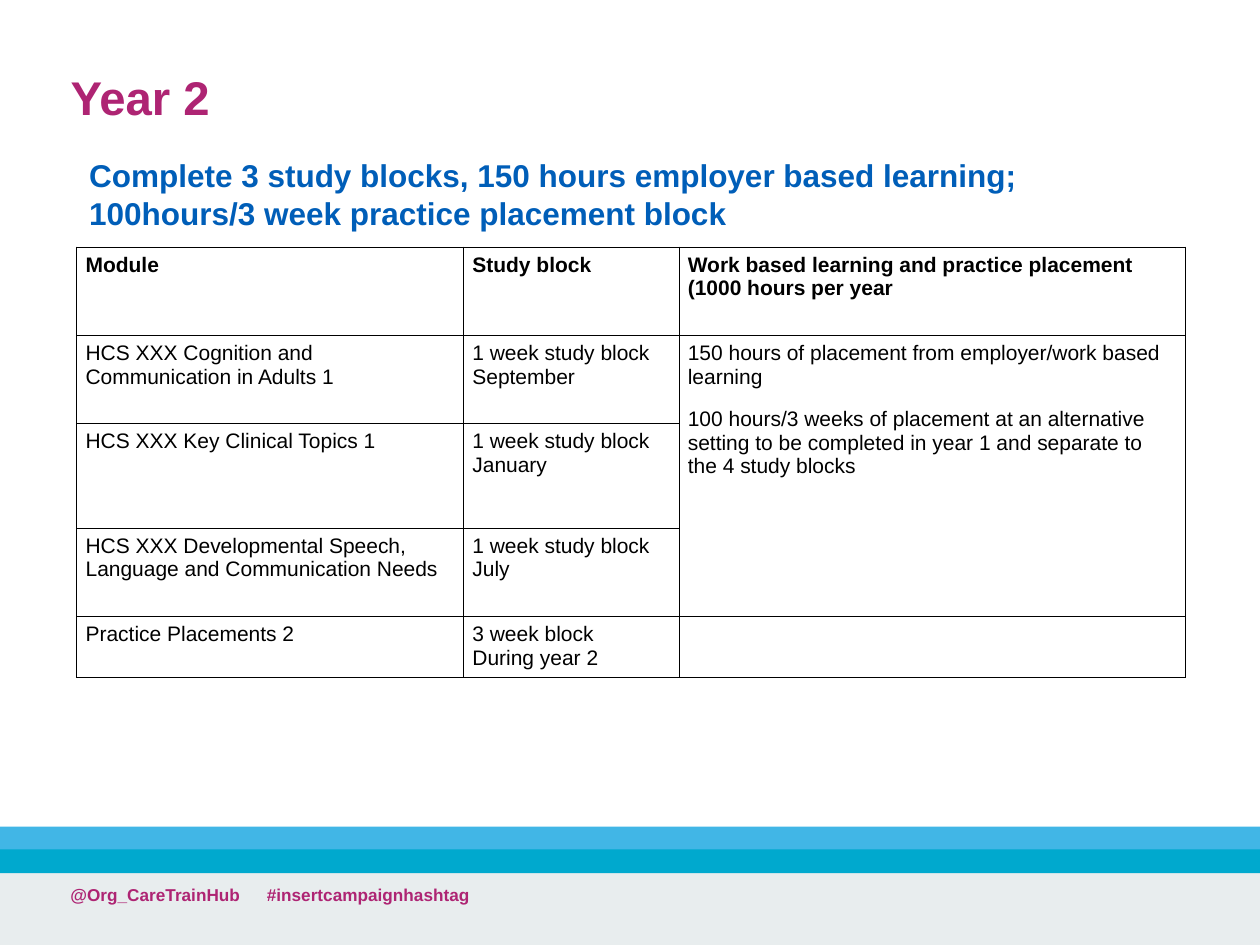
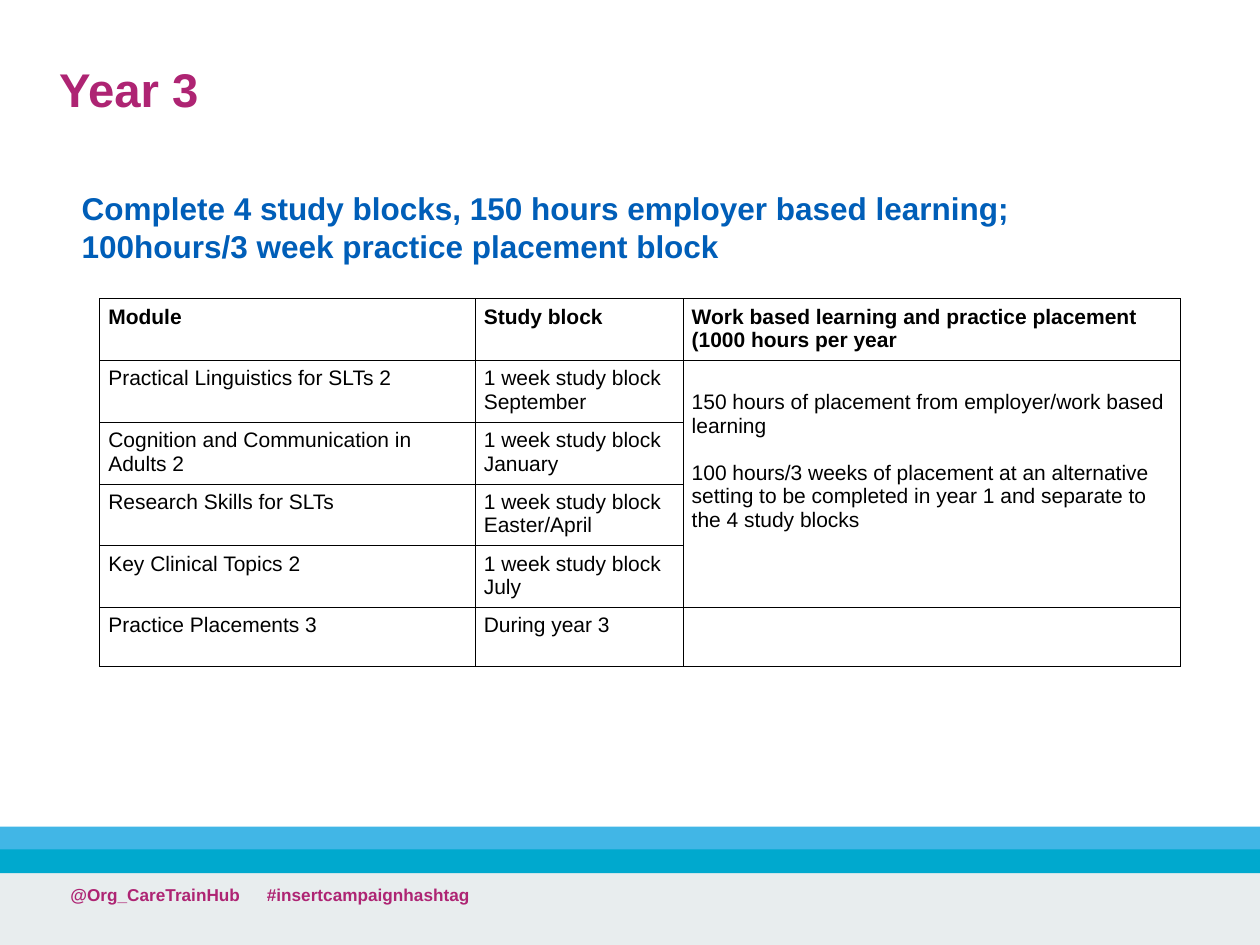
from lxml.etree import SubElement
from pptx import Presentation
from pptx.dml.color import RGBColor
from pptx.enum.shapes import MSO_SHAPE
from pptx.enum.text import MSO_ANCHOR, PP_ALIGN
from pptx.oxml.ns import qn
from pptx.util import Inches, Pt

FONT = "Arial"
PINK, BLUE, BLACK = "AE2473", "005EB8", "000000"
BANDS = [(6.93, 0.57, "E8EDEE"), (6.56, 0.19, "41B6E6"), (6.74, 0.19, "00A9CE")]
HANDLE = "@Org_CareTrainHub\t#insertcampaignhashtag"
WORK_HEAD = "Work based learning and practice placement (1000 hours per year"
WORK = (
    "150 hours of placement from employer/work based learning\n"
    "100 hours/3 weeks of placement at an alternative setting to be "
    "completed in year 1 and separate to the 4 study blocks"
)
WEEK = "1 week study block\n"
GOAL = (
    "Complete {} study blocks, 150 hours employer based learning; "
    "100hours/3 week practice placement block"
)

YEARS = [
    dict(
        title="Year 2", title_box=(0.46, 0.46, 8.62, 0.67),
        goal=GOAL.format(3), goal_box=(0.61, 1.19, 8.8, 0.71),
        spot=(0.61, 1.96), cols=(3.07, 1.71, 4.02),
        heights=(0.7, 0.7, 0.83, 0.7, 0.47), drop=0, gap=11,
        rows=[
            ("Module", "Study block", WORK_HEAD),
            ("HCS XXX Cognition and Communication in Adults 1", WEEK + "September", WORK),
            ("HCS XXX Key Clinical Topics 1", WEEK + "January", ""),
            ("HCS XXX Developmental Speech, Language and Communication Needs",
             WEEK + "July", ""),
            ("Practice Placements 2", "3 week block\nDuring year 2", ""),
        ],
    ),
    dict(
        title="Year 3", title_box=(0.37, 0.35, 8.62, 0.76),
        goal=GOAL.format(4), goal_box=(0.55, 1.45, 8.44, 0.71),
        spot=(0.79, 2.37), cols=(2.98, 1.65, 3.95),
        heights=(0.47,) * 6, drop=0.19, gap=13.5,
        rows=[
            ("Module", "Study block", WORK_HEAD),
            ("Practical Linguistics for SLTs 2", WEEK + "September", WORK),
            ("Cognition and Communication in Adults 2", WEEK + "January", ""),
            ("Research Skills for SLTs", WEEK + "Easter/April", ""),
            ("Key Clinical Topics 2", WEEK + "July", ""),
            ("Practice Placements 3", "During year 3", ""),
        ],
    ),
]


def color(code):
    return RGBColor.from_string(code)


def write(frame, text, size, code, bold=True):
    frame.text = text
    frame.word_wrap = True
    for para in frame.paragraphs:
        para.alignment = PP_ALIGN.LEFT
        for run in para.runs:
            font = run.font
            font.name, font.size, font.bold = FONT, Pt(size), bold
            font.color.rgb = color(code)


def add_text(slide, box, text, size, code):
    frame = slide.shapes.add_textbox(*map(Inches, box)).text_frame
    write(frame, text, size, code)
    return frame


def add_title(slide, box, text):
    title = slide.shapes.title
    title.left, title.top, title.width, title.height = map(Inches, box)
    write(title.text_frame, text, 27, PINK)
    title.text_frame.vertical_anchor = MSO_ANCHOR.MIDDLE
    title.text_frame.paragraphs[0].line_spacing = 0.9


def add_footer(slide):
    for top, height, code in BANDS:
        band = slide.shapes.add_shape(
            MSO_SHAPE.RECTANGLE, 0, Inches(top), Inches(10), Inches(height))
        band.shadow.inherit = False
        band.fill.solid()
        band.fill.fore_color.rgb = color(code)
        band.line.fill.background()
    frame = add_text(slide, (0.46, 6.97, 5.84, 0.53), HANDLE, 9.8, PINK)
    props = frame.paragraphs[0]._p.get_or_add_pPr()
    stops = SubElement(props, qn("a:tabLst"))
    SubElement(stops, qn("a:tab"), pos=str(Inches(1.56)), algn="l")


def outline(cell):
    """Give a cell thin black borders and no fill."""
    props = cell._tc.get_or_add_tcPr()
    for side in ("lnL", "lnR", "lnT", "lnB"):
        line = SubElement(props, qn("a:" + side), w=str(Pt(0.5)))
        fill = SubElement(line, qn("a:solidFill"))
        SubElement(fill, qn("a:srgbClr"), val=BLACK)
    cell.fill.background()


def add_plan(slide, spot, cols, heights, rows, drop, gap):
    """Module table; the work cell spans all rows between the head and last."""
    size = sum(cols), sum(heights)
    table = slide.shapes.add_table(
        len(rows), len(cols), *map(Inches, spot + size)).table
    table.first_row = table.horz_banding = False
    for col, width in zip(table.columns, cols):
        col.width = Inches(width)
    for row, height in zip(table.rows, heights):
        row.height = Inches(height)
    for r, texts in enumerate(rows):
        for c, text in enumerate(texts):
            cell = table.cell(r, c)
            cell.margin_left = cell.margin_right = Inches(0.07)
            cell.margin_top, cell.margin_bottom = Inches(0.05), Inches(0.04)
            outline(cell)
            if text:
                write(cell.text_frame, text, 12, BLACK, bold=r == 0)
    work = table.cell(1, 2)
    work.merge(table.cell(len(rows) - 2, 2))
    work.margin_top = Inches(0.05 + drop)
    work.text_frame.paragraphs[1].space_before = Pt(gap)


def add_year(deck, year):
    slide = deck.slides.add_slide(deck.slide_layouts.get_by_name("Title Only"))
    add_footer(slide)
    add_title(slide, year["title_box"], year["title"])
    add_plan(slide, *(year[key] for key in
                      ("spot", "cols", "heights", "rows", "drop", "gap")))
    add_text(slide, year["goal_box"], year["goal"], 18, BLUE)


def main():
    deck = Presentation()
    deck.slide_width, deck.slide_height = Inches(10), Inches(7.5)
    for year in YEARS:
        add_year(deck, year)
    deck.save("out.pptx")


if __name__ == "__main__":
    main()
